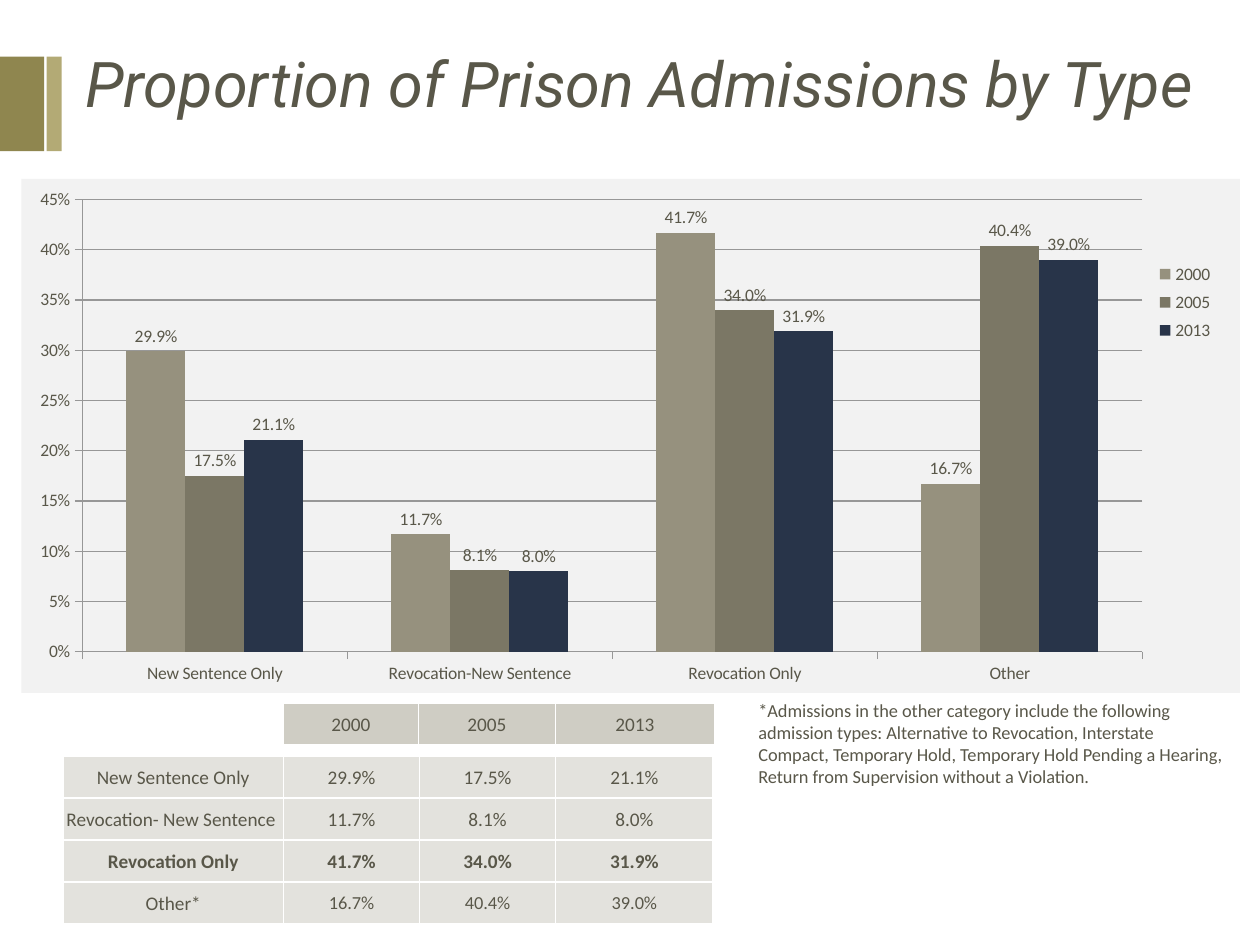
from lxml import etree
from pptx import Presentation
from pptx.chart.data import CategoryChartData
from pptx.dml.color import RGBColor
from pptx.enum.chart import XL_CHART_TYPE as ChartType
from pptx.enum.chart import XL_LABEL_POSITION as LabelPosition
from pptx.enum.chart import XL_LEGEND_POSITION as LegendPosition
from pptx.enum.chart import XL_TICK_MARK as TickMark
from pptx.enum.shapes import MSO_SHAPE as Shape
from pptx.enum.text import MSO_ANCHOR as Anchor
from pptx.enum.text import PP_ALIGN as Align
from pptx.oxml import parse_xml
from pptx.oxml.ns import nsdecls, qn
from pptx.util import Inches, Pt

COLORS = {
    "text": "595749", "white": "FFFFFF", "olive": "8F864F", "khaki": "B3AA75",
    "header": "CFCDC4", "body": "E3E2DD", "panel": "F2F2F2", "grid": "979797",
    "2000": "96917E", "2005": "7B7765", "2013": "283449",
}
YEARS = ["2000", "2005", "2013"]
CATEGORIES = ["New Sentence Only", "Revocation-New Sentence", "Revocation Only", "Other"]
TABLE_LABELS = ["New Sentence Only", "Revocation- New Sentence ", "Revocation Only", "Other*"]
SHARES = [
    [0.299, 0.175, 0.211],
    [0.117, 0.081, 0.08],
    [0.417, 0.34, 0.319],
    [0.167, 0.404, 0.39],
]
NOTE = (
    "*Admissions in the other category include the following admission types: "
    "Alternative to Revocation, Interstate Compact, Temporary Hold, Temporary Hold "
    "Pending a Hearing, Return from Supervision without a Violation."
)


def color(name):
    return RGBColor.from_string(COLORS[name])


def place_manually(element, x, y, width, height, inner=False):
    """Fix a plot area or legend at fractions of the chart's size."""
    target = '<c:layoutTarget val="inner"/>' if inner else ""
    layout = parse_xml(
        f'<c:layout {nsdecls("c")}><c:manualLayout>{target}'
        '<c:xMode val="edge"/><c:yMode val="edge"/>'
        f'<c:x val="{x}"/><c:y val="{y}"/><c:w val="{width}"/><c:h val="{height}"/>'
        "</c:manualLayout></c:layout>"
    )
    for old in element.findall(qn("c:layout")):
        element.remove(old)
    if inner:
        element.insert(0, layout)
    else:
        element.find(qn("c:legendPos")).addnext(layout)


class SlideBuilder:
    font_name = "Calibri"

    def __init__(self, slide):
        self.slide = slide

    def style(self, font, size, name=None, bold=None, italic=None):
        font.name = name or self.font_name
        font.size = Pt(size)
        font.bold = bold
        font.italic = italic
        font.color.rgb = color("text")

    def bar(self, left, top, width, height, fill):
        shape = self.slide.shapes.add_shape(
            Shape.RECTANGLE, Inches(left), Inches(top), Inches(width), Inches(height))
        shape.shadow.inherit = False
        shape.fill.solid()
        shape.fill.fore_color.rgb = color(fill)
        shape.line.fill.background()

    def text(self, left, top, width, height, content, size, anchor=Anchor.TOP, **style):
        box = self.slide.shapes.add_textbox(
            Inches(left), Inches(top), Inches(width), Inches(height))
        frame = box.text_frame
        frame.word_wrap = True
        frame.vertical_anchor = anchor
        frame.text = content
        self.style(frame.paragraphs[0].runs[0].font, size, **style)
        return box

    def table_row(self, left, top, widths, values, fill, sizes, bold=False):
        """Add a one-row table with white cell borders."""
        height = Inches(0.33)
        frame = self.slide.shapes.add_table(
            1, len(values), Inches(left), Inches(top), Inches(sum(widths)), height)
        table = frame.table
        table.first_row = table.horz_banding = False
        table.rows[0].height = height
        for index, (width, value, size) in enumerate(zip(widths, values, sizes)):
            table.columns[index].width = Inches(width)
            cell = table.cell(0, index)
            cell.margin_left = cell.margin_right = cell.margin_top = Inches(0.01)
            cell.margin_bottom = 0
            cell.vertical_anchor = Anchor.MIDDLE
            cell.text_frame.text = value
            paragraph = cell.text_frame.paragraphs[0]
            paragraph.alignment = Align.CENTER
            self.style(paragraph.runs[0].font, size, bold=bold)
            self.cell_borders(cell)
            cell.fill.solid()
            cell.fill.fore_color.rgb = color(fill)

    def cell_borders(self, cell):
        properties = cell._tc.get_or_add_tcPr()
        for side in ("lnL", "lnR", "lnT", "lnB"):
            properties.append(parse_xml(
                f'<a:{side} {nsdecls("a")} w="{Pt(1)}"><a:solidFill>'
                f'<a:srgbClr val="{COLORS["white"]}"/></a:solidFill></a:{side}>'))

    def column_chart(self, left, top, width, height):
        data = CategoryChartData(number_format="0.0%")
        data.categories = CATEGORIES
        for year, values in zip(YEARS, zip(*SHARES)):
            data.add_series(year, values)
        chart = self.slide.shapes.add_chart(
            ChartType.COLUMN_CLUSTERED, Inches(left), Inches(top),
            Inches(width), Inches(height), data).chart
        self.style(chart.font, 10)
        chart.has_title = False
        chart._chartSpace.find(qn("c:txPr")).addprevious(parse_xml(
            f'<c:spPr {nsdecls("c", "a")}><a:solidFill><a:srgbClr val="{COLORS["panel"]}"/>'
            "</a:solidFill><a:ln><a:noFill/></a:ln></c:spPr>"))

        plot = chart.plots[0]
        plot.gap_width = 150
        plot.overlap = 0
        plot.vary_by_categories = False
        for series in plot.series:
            series.format.fill.solid()
            series.format.fill.fore_color.rgb = color(series.name)
            labels = series.data_labels
            labels.show_value = True
            labels.position = LabelPosition.OUTSIDE_END
            labels.number_format = "0.0%"
            labels.number_format_is_linked = False
            self.style(labels.font, 10)

        value_axis = chart.value_axis
        value_axis.minimum_scale = 0
        value_axis.maximum_scale = 0.45
        value_axis.major_unit = 0.05
        value_axis.has_major_gridlines = True
        value_axis.tick_labels.number_format = "0%"
        value_axis.tick_labels.number_format_is_linked = False
        for axis in (chart.category_axis, value_axis):
            axis.major_tick_mark = TickMark.OUTSIDE
            self.style(axis.tick_labels.font, 10)
        for lines in (chart.category_axis, value_axis, value_axis.major_gridlines):
            lines.format.line.color.rgb = color("grid")
            lines.format.line.width = Pt(0.75)

        chart.has_legend = True
        chart.legend.position = LegendPosition.RIGHT
        chart.legend.include_in_layout = False
        self.style(chart.legend.font, 10)
        place_manually(chart._chartSpace.chart.plotArea, 0.05, 0.04, 0.87, 0.88, inner=True)
        place_manually(chart.legend._element, 0.92, 0.15, 0.07, 0.18)


def main():
    presentation = Presentation()
    presentation.slide_width = Inches(10)
    presentation.slide_height = Inches(7.5)
    builder = SlideBuilder(presentation.slides.add_slide(presentation.slide_layouts[6]))

    builder.bar(0, 0.45, 0.35, 0.75, "olive")
    builder.bar(0.37, 0.45, 0.12, 0.75, "khaki")
    title = builder.text(0.58, 0.25, 9.11, 0.81, "Proportion of Prison Admissions by Type",
                         36, Anchor.MIDDLE, name="Roboto", italic=True)
    title.fill.solid()
    title.fill.fore_color.rgb = color("white")
    white = title._element.spPr.find(".//" + qn("a:srgbClr"))
    etree.SubElement(white, qn("a:alpha"), val="50000")

    builder.column_chart(0.17, 1.42, 9.67, 4.08)

    builder.table_row(2.25, 5.58, [1.07, 1.09, 1.26], YEARS, "header", [11] * 3)
    for index, (label, shares) in enumerate(zip(TABLE_LABELS, SHARES)):
        value_size = 10.5 if label == "Other*" else 11
        builder.table_row(
            0.5, 6 + index / 3, [1.75, 1.08, 1.08, 1.25],
            [label] + [f"{share:.1%}" for share in shares], "body",
            [11] + [value_size] * 3, bold=label == "Revocation Only")

    builder.text(5.92, 5.5, 3.92, 0.81, NOTE, 10.5)
    presentation.save("out.pptx")


if __name__ == "__main__":
    main()
